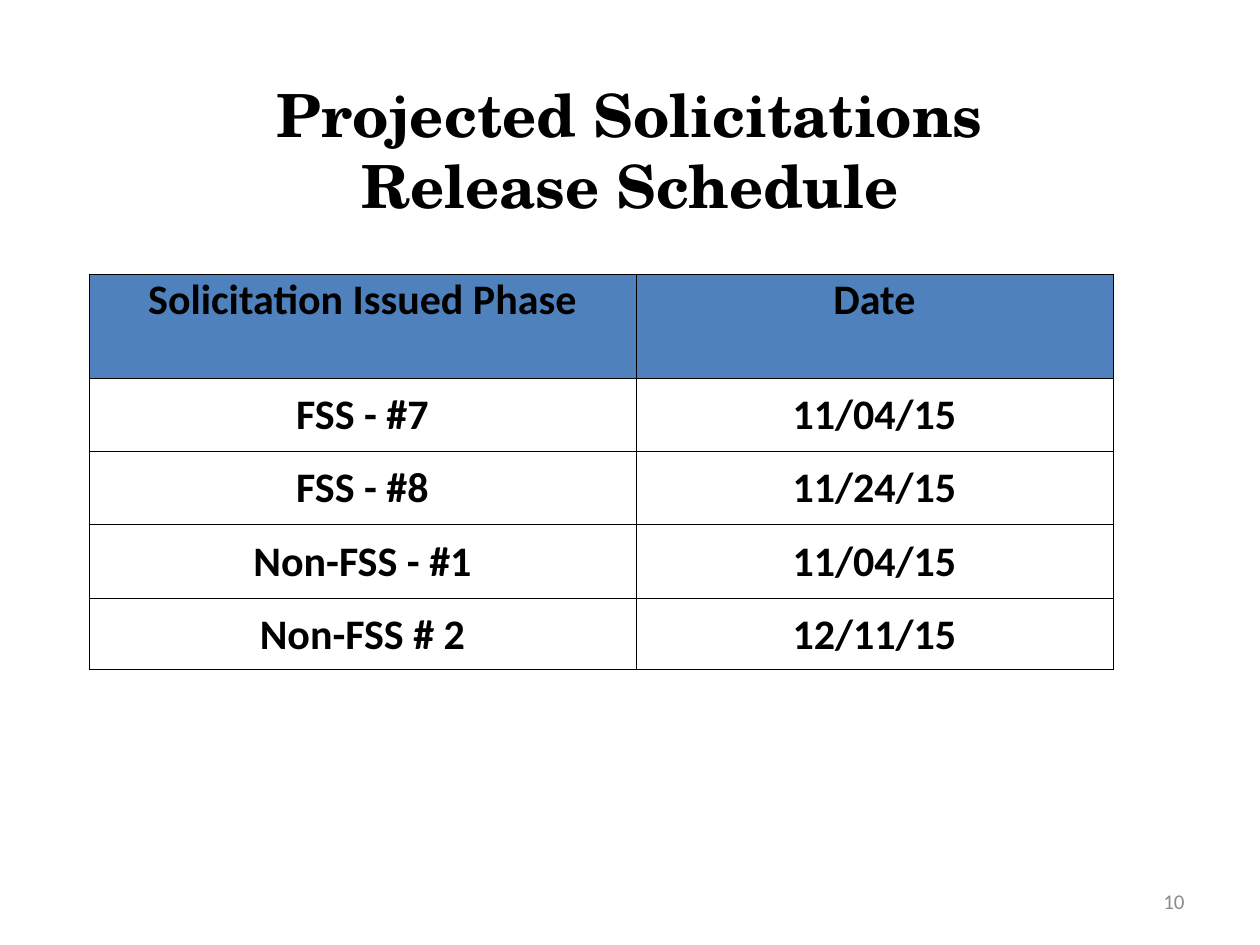
import pptx
import pptx.util
import pptx.dml.color
import pptx.enum.text
import pptx.oxml.ns
import lxml.etree

PX = 914400 / 126
BLACK = pptx.dml.color.RGBColor(0x00, 0x00, 0x00)
WHITE = pptx.dml.color.RGBColor(0xFF, 0xFF, 0xFF)
BLUE = pptx.dml.color.RGBColor(0x4F, 0x81, 0xBD)
GREY = pptx.dml.color.RGBColor(0x8C, 0x8C, 0x8C)
ALIGN = pptx.enum.text.PP_ALIGN
ANCHOR = pptx.enum.text.MSO_ANCHOR

TITLE_FONT = {"name": "TeX Gyre Schola", "size": pptx.util.Pt(34), "bold": True}
TABLE_FONT = {"name": "Calibri", "size": pptx.util.Pt(24), "bold": True}
NUMBER_FONT = {"name": "Calibri", "size": pptx.util.Pt(12), "bold": False}

COLUMN_WIDTHS = [547, 477]
ROW_HEIGHTS = [104, 73, 74, 74, 71]
SCHEDULE = [
    ("Solicitation Issued Phase", "Date"),
    ("FSS - #7", "11/04/15"),
    ("FSS - #8", "11/24/15"),
    ("Non-FSS - #1", "11/04/15"),
    ("Non-FSS # 2", "12/11/15"),
]


def px(length):
    return pptx.util.Emu(round(length * PX))


def set_values(target, values):
    for name, value in values.items():
        setattr(target, name, value)


def write_text(frame, text, font, color, align):
    frame.text = text
    frame.word_wrap = True
    para = frame.paragraphs[0]
    para.alignment = align
    for span in para.runs:
        set_values(span.font, font)
        span.font.color.rgb = color


def add_borders(cell, color):
    properties = cell._tc.get_or_add_tcPr()
    qn = pptx.oxml.ns.qn
    for side in ("a:lnL", "a:lnR", "a:lnT", "a:lnB"):
        line = lxml.etree.SubElement(properties, qn(side), w=str(pptx.util.Pt(0.5)))
        fill = lxml.etree.SubElement(line, qn("a:solidFill"))
        lxml.etree.SubElement(fill, qn("a:srgbClr"), val=str(color))


def place_title(page, left, top, width, height):
    title = page.shapes.title
    set_values(title, {"left": px(left), "top": px(top),
                       "width": px(width), "height": px(height)})
    frame = title.text_frame
    write_text(frame, "Projected Solicitations\vRelease Schedule",
               TITLE_FONT, BLACK, ALIGN.CENTER)
    set_values(frame, {"auto_size": pptx.enum.text.MSO_AUTO_SIZE.NONE,
                       "vertical_anchor": ANCHOR.MIDDLE})


def place_schedule(page, left, top):
    table = page.shapes.add_table(
        len(SCHEDULE), len(COLUMN_WIDTHS), px(left), px(top),
        px(sum(COLUMN_WIDTHS)), px(sum(ROW_HEIGHTS))).table
    for column, width in zip(table.columns, COLUMN_WIDTHS):
        column.width = px(width)
    for index, (row, height, texts) in enumerate(zip(table.rows, ROW_HEIGHTS, SCHEDULE)):
        row.height = px(height)
        is_header = index == 0
        for cell, text in zip(row.cells, texts):
            write_text(cell.text_frame, text, TABLE_FONT, BLACK, ALIGN.CENTER)
            set_values(cell, {
                "margin_left": px(1), "margin_right": px(1),
                "margin_top": px(1), "margin_bottom": px(0),
                "vertical_anchor": ANCHOR.TOP if is_header else ANCHOR.MIDDLE})
            add_borders(cell, BLACK)
            cell.fill.solid()
            cell.fill.fore_color.rgb = BLUE if is_header else WHITE


def place_page_number(page, left, top, width, height):
    box = page.shapes.add_textbox(px(left), px(top), px(width), px(height))
    write_text(box.text_frame, "10", NUMBER_FONT, GREY, ALIGN.RIGHT)
    box.text_frame.vertical_anchor = ANCHOR.MIDDLE


def main():
    deck = pptx.Presentation()
    set_values(deck, {"slide_width": px(1260), "slide_height": px(945)})
    page = deck.slides.add_slide(deck.slide_layouts.get_by_name("Title Only"))
    place_title(page, 63, 71, 1134, 157)
    place_page_number(page, 903, 876, 294, 50)
    place_schedule(page, 89, 274)
    deck.save("out.pptx")


if __name__ == "__main__":
    main()
